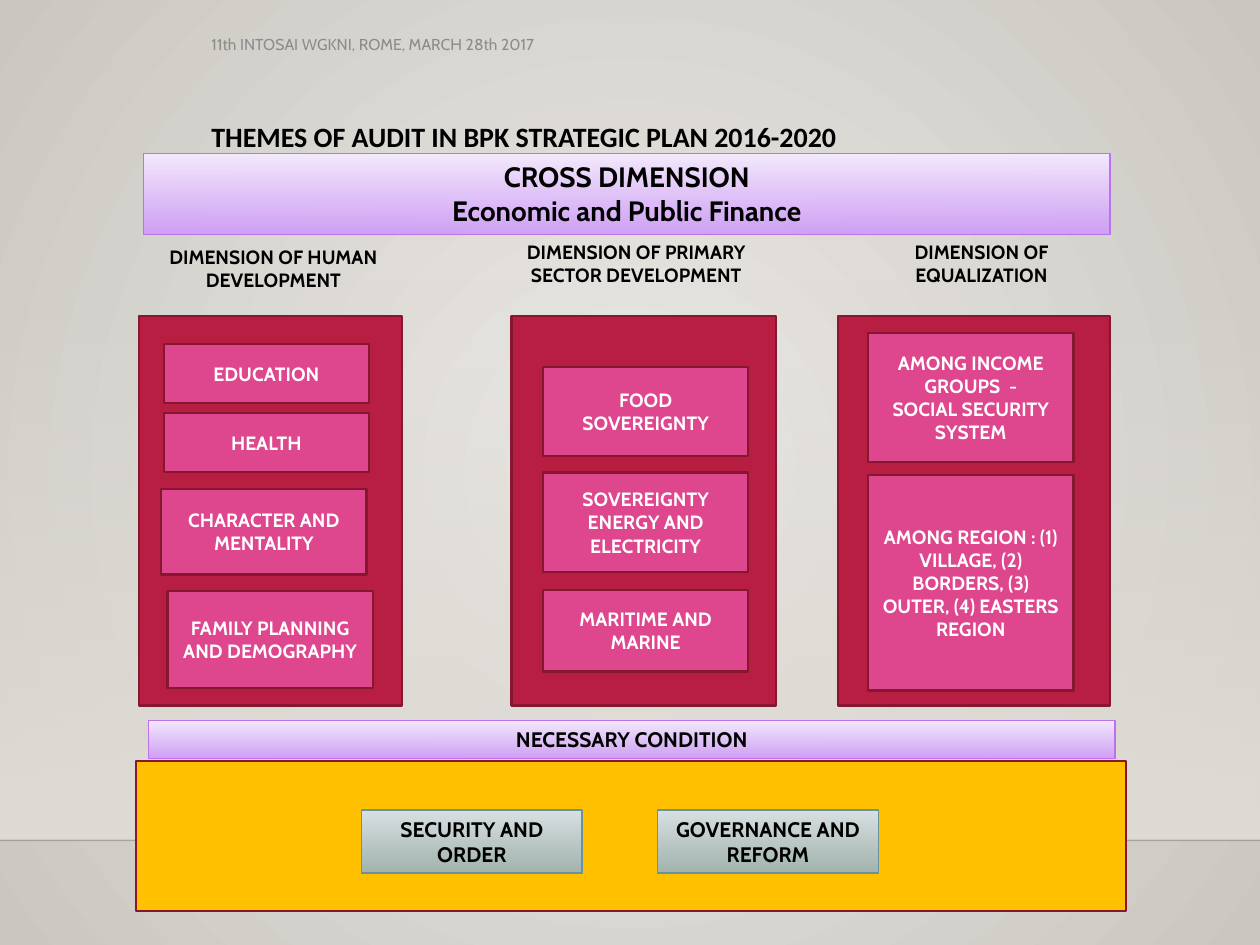
import pptx
import pptx.util
import pptx.dml.color
import pptx.enum.shapes
import pptx.enum.text
import pptx.oxml
import pptx.oxml.ns

qn = pptx.oxml.ns.qn
hexc = pptx.dml.color.RGBColor.from_string
ALIGN = pptx.enum.text.PP_ALIGN
ANCHOR = pptx.enum.text.MSO_ANCHOR
AUTO = pptx.enum.text.MSO_AUTO_SIZE

prs = pptx.Presentation()
prs.slide_width, prs.slide_height = pptx.util.Inches(10), pptx.util.Inches(7.5)
CELL = prs.slide_width / 100
s = prs.slides.add_slide(prs.slide_layouts[6])


def grad(fill, root, stops, shade='<a:lin ang="5400000" scaled="0"/>'):
    fill.gradient()
    old = root.find(".//" + qn("a:gradFill"))
    gs = "".join(
        f'<a:gs pos="{pos}000"><a:srgbClr val="{c}"><a:alpha val="{alpha}000"/></a:srgbClr></a:gs>'
        for pos, c, alpha in stops)
    new = pptx.oxml.parse_xml(
        f'<a:gradFill {pptx.oxml.ns.nsdecls("a")} rotWithShape="1"><a:gsLst>{gs}</a:gsLst>{shade}</a:gradFill>')
    old.getparent().replace(old, new)


def box(cells, text="", fill=None, line=None, width=1.25, size=11, color="FFFFFF",
        font="Cabin", bold=True, align=ALIGN.CENTER, anchor=ANCHOR.MIDDLE, auto=AUTO.NONE):
    at = [round(v * CELL) for v in cells]
    if fill:
        sp = s.shapes.add_shape(pptx.enum.shapes.MSO_SHAPE.RECTANGLE, *at)
        sp.shadow.inherit = False
        if isinstance(fill, str):
            sp.fill.solid()
            sp.fill.fore_color.rgb = hexc(fill)
        else:
            grad(sp.fill, sp._element, fill)
        if line:
            sp.line.color.rgb = hexc(line)
            sp.line.width = pptx.util.Pt(width)
        else:
            sp.line.fill.background()
    else:
        sp = s.shapes.add_textbox(*at)
    if not text:
        return
    tf = sp.text_frame
    for name, value in {"word_wrap": True, "vertical_anchor": anchor, "auto_size": auto}.items():
        setattr(tf, name, value)
    for i, words in enumerate(text.split("\n")):
        p = tf.paragraphs[0] if i == 0 else tf.add_paragraph()
        p.alignment = align
        r = p.add_run()
        r.text = words
        r.font.color.rgb = hexc(color)
        for name, value in {"size": pptx.util.Pt(size), "name": font, "bold": bold}.items():
            setattr(r.font, name, value)


grad(s.background.fill, s._element, [(0, "ECEAE7", 100), (100, "CAC7C1", 100)],
     '<a:path path="circle"><a:fillToRect l="50000" t="50000" r="50000" b="50000"/></a:path>')
box((0, 22, 100, 44.6), fill=[(0, "DFDBD5", 0), (100, "DFDBD5", 100)])

floor = round(66.7 * CELL)
ln = s.shapes.add_connector(pptx.enum.shapes.MSO_CONNECTOR.STRAIGHT, 0, floor, prs.slide_width, floor)
ln.line.color.rgb = hexc("000001")
ln.line.width = pptx.util.Pt(1)
alpha = pptx.oxml.parse_xml(f'<a:alpha {pptx.oxml.ns.nsdecls("a")} val="20000"/>')
ln._element.find(".//" + qn("a:ln")).find(".//" + qn("a:srgbClr")).append(alpha)
ln._element.spPr.append(pptx.oxml.parse_xml(f'<a:effectLst {pptx.oxml.ns.nsdecls("a")}/>'))

MAROON = "871631"
heading = {"color": "000000", "anchor": ANCHOR.TOP, "auto": AUTO.SHAPE_TO_FIT_TEXT}
lilac = {"fill": [(0, "F4EAFD", 100), (100, "CE9CF7", 92)], "line": "BC72F0", "width": 0.75, **heading}
steel = {"fill": [(0, "D9E1E4", 100), (100, "9AB2BC", 92)], "line": "6892A0", "width": 0.75, **heading}

box((15.8, 0, 47.5, 7), "11th INTOSAI WGKNI, ROME, MARCH 28th 2017",
    size=9, color="8C8C8C", bold=False, align=ALIGN.LEFT)
box((10.8, 60.4, 78.6, 11.9), fill="FFC000", line=MAROON)
box((11.4, 12.2, 76.7, 6.4), "CROSS DIMENSION\nEconomic and Public Finance", size=16, **lilac)
box((11.8, 57.2, 76.7, 3), "NECESSARY CONDITION", size=12, **lilac)
for x, text in [(28.7, "SECURITY AND ORDER"), (52.2, "GOVERNANCE AND REFORM")]:
    box((x, 64.3, 17.5, 5), text, size=12, **steel)

dimensions = [
    (11, 20.9, (11.8, 19, 19.8, 6.6), "DIMENSION OF HUMAN DEVELOPMENT", [
        (13, 27.3, 4.7, "EDUCATION"),
        (13, 32.8, 4.7, "HEALTH"),
        (12.8, 38.8, 6.8, "CHARACTER AND MENTALITY"),
        (13.3, 46.9, 7.7, "FAMILY PLANNING AND DEMOGRAPHY")]),
    (40.6, 21, (40.6, 18.6, 19.8, 6.6), "DIMENSION OF PRIMARY SECTOR DEVELOPMENT", [
        (43.1, 29.1, 7.1, "FOOD SOVEREIGNTY"),
        (43.1, 37.5, 7.9, "SOVEREIGNTY ENERGY AND ELECTRICITY"),
        (43.1, 46.8, 6.5, "MARITIME AND MARINE")]),
    (66.5, 21.6, (68, 18.6, 19.8, 4.7), "DIMENSION OF EQUALIZATION", [
        (68.9, 26.4, 10.3, "AMONG INCOME GROUPS  -\nSOCIAL SECURITY SYSTEM"),
        (68.9, 37.7, 17.1, "AMONG REGION : (1) VILLAGE, (2) BORDERS, (3) OUTER, (4) EASTERS REGION")]),
]
for left, width, title_cells, title, themes in dimensions:
    box((left, 25.1, width, 30.9), fill="B71E42", line=MAROON)
    for x, y, h, text in themes:
        box((x, y, 16.3, h), text, fill="DE478E", line=MAROON)
    box(title_cells, title, **heading)

box((15.8, 9, 76.3, 3.7), "THEMES OF AUDIT IN BPK STRATEGIC PLAN 2016-2020",
    size=16, font="Calibri", align=ALIGN.LEFT, **heading)

prs.save("out.pptx")
